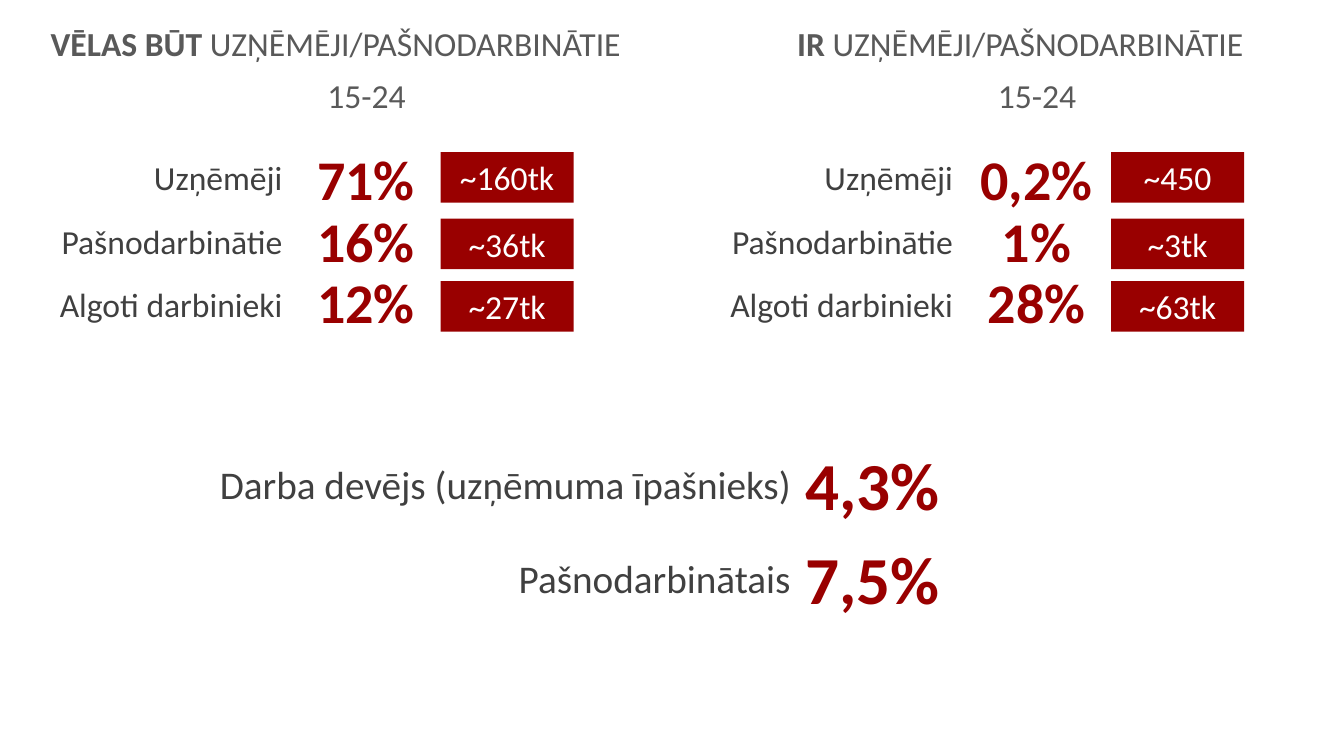
from dataclasses import dataclass

from pptx import Presentation
from pptx import util as u
from pptx.dml import color
from pptx.enum import shapes, text


@dataclass(frozen=True)
class Theme:
    font: str = "Calibri"
    red: str = "990000"
    head: str = "595959"
    dark: str = "404040"
    white: str = "FFFFFF"
    body: int = 24
    large: int = 28
    value: int = 40
    total: int = 48


class Board:
    def __init__(self, slide, theme):
        self.slide = slide
        self.theme = theme

    def fill_text(self, shape, words, size, ink, align, bold=False):
        frame = shape.text_frame
        frame.word_wrap = True
        frame.vertical_anchor = text.MSO_ANCHOR.TOP
        frame.text = words
        para = frame.paragraphs[0]
        para.alignment = align
        for run in para.runs:
            self.style(run, size, ink, bold)
        return para

    def style(self, run, size, ink, bold):
        run.font.name = self.theme.font
        run.font.size = u.Pt(size)
        run.font.bold = bold
        run.font.color.rgb = color.RGBColor.from_string(ink)

    def label(self, area, words, size, ink, align=text.PP_ALIGN.CENTER, bold=False):
        box = self.slide.shapes.add_textbox(*map(u.Inches, area))
        return self.fill_text(box, words, size, ink, align, bold)

    def title(self, area, lead, rest):
        t = self.theme
        para = self.label(area, lead, t.body, t.head, bold=True)
        run = para.add_run()
        run.text = rest
        self.style(run, t.body, t.head, False)

    def chip(self, area, words):
        t = self.theme
        box = self.slide.shapes.add_shape(
            shapes.MSO_SHAPE.RECTANGLE, *map(u.Inches, area))
        box.shadow.inherit = False
        box.fill.solid()
        box.fill.fore_color.rgb = color.RGBColor.from_string(t.red)
        box.line.fill.background()
        self.fill_text(box, words, t.body, t.white, text.PP_ALIGN.CENTER)

    def panel(self, left, rows):
        t = self.theme
        self.label((left + 2.76, 0.69, 1.19, 0.5), "15-24", t.body, t.head)
        for (name, share, count), (top, mid, edge) in zip(rows, TOPS):
            self.label((left, top, 2.62, 0.5), name, t.body, t.dark,
                       text.PP_ALIGN.RIGHT)
            self.label((left + 2.69, mid, 1.32, 0.77), share, t.value, t.red,
                       bold=True)
            self.chip((left + 4.09, edge, 1.32, 0.5), count)


# Tops of the name, share and count in each row
TOPS = [(1.51, 1.38, 1.51), (2.14, 2, 2.17), (2.77, 2.61, 2.79)]
NAMES = ["Uzņēmēji", "Pašnodarbinātie", "Algoti darbinieki"]
GROUP = "UZŅĒMĒJI/PAŠNODARBINĀTIE"
PANELS = [
    (0.28, (0.28, 0.18, 6.1, 0.5), "VĒLAS BŪT ",
     ["71%", "16%", "12%"], ["~160tk", "~36tk", "~27tk"]),
    (6.93, (7.74, 0.18, 4.76, 0.5), "IR ",
     ["0,2%", "1%", "28%"], ["~450", "~3tk", "~63tk"]),
]
TOTALS = [("Darba devējs (uzņēmuma īpašnieks)", "4,3%"),
          ("Pašnodarbinātais", "7,5%")]


def main():
    deck = Presentation()
    deck.slide_width = u.Inches(13.33)
    deck.slide_height = u.Inches(7.5)
    t = Theme()
    board = Board(deck.slides.add_slide(deck.slide_layouts[6]), t)

    # Wish and reality panels
    for left, area, lead, shares, counts in PANELS:
        board.title(area, lead, GROUP)
        board.panel(left, zip(NAMES, shares, counts))

    # Overall shares
    for i, (name, share) in enumerate(TOTALS):
        top = 4.35 + 0.93 * i
        board.label((7.76, top, 1.79, 0.91), share, t.total, t.red, bold=True)
        board.label((1.71, top + 0.17, 6.23, 0.57), name, t.large, t.dark,
                    text.PP_ALIGN.RIGHT)

    deck.save("out.pptx")


if __name__ == "__main__":
    main()
